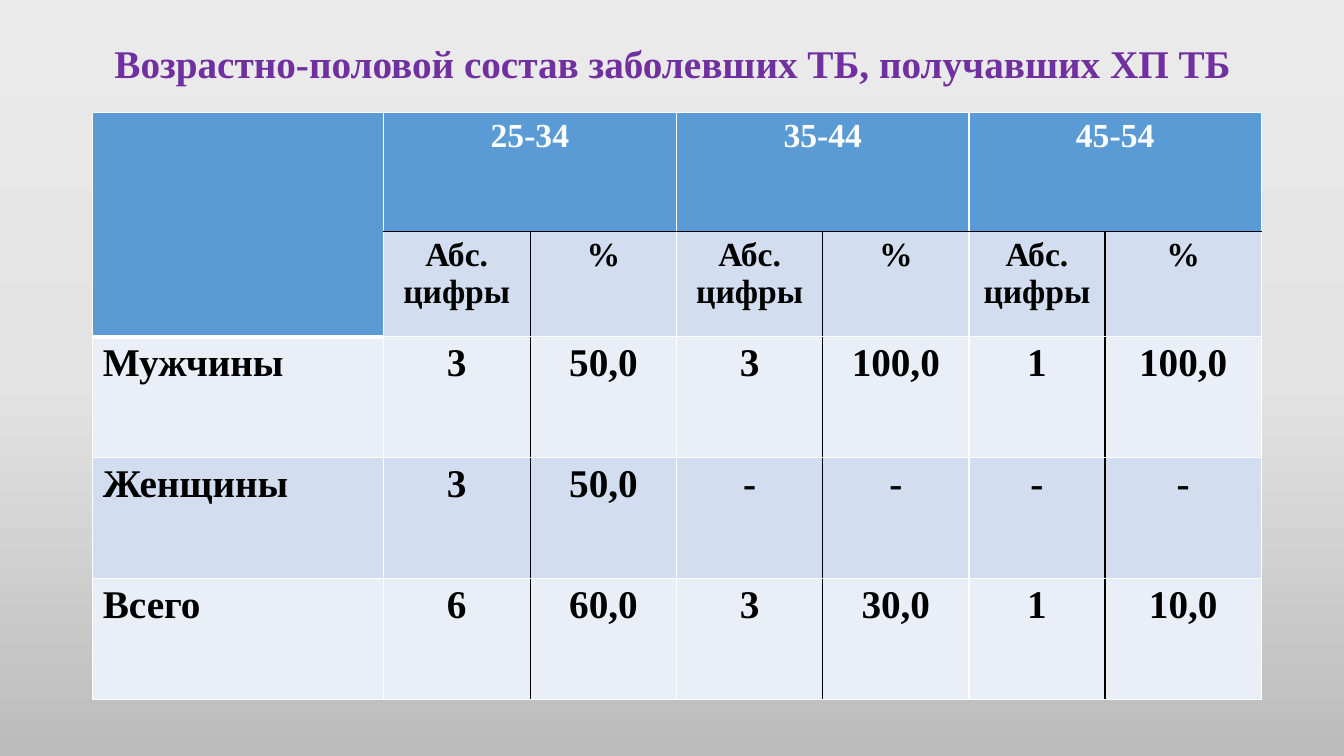
from copy import deepcopy
from lxml import etree
from pptx import Presentation, util as u
from pptx.dml.color import RGBColor
from pptx.enum import text
from pptx.oxml import ns

WHITE = RGBColor(0xFF, 0xFF, 0xFF)
BLACK = RGBColor(0, 0, 0)
BLUE = RGBColor(0x5B, 0x9B, 0xD5)
MID = RGBColor(0xD2, 0xDE, 0xEF)
PALE = RGBColor(0xEA, 0xEF, 0xF7)
PURPLE = RGBColor(0x70, 0x30, 0xA0)
SHADES = [(0, RGBColor(0xEB, 0xEA, 0xEA)), (0.5, RGBColor(0xE4, 0xE3, 0xE3)),
          (1, RGBColor(0xBD, 0xBC, 0xBC))]
FONT = "Times New Roman"
TITLE = "Возрастно-половой состав заболевших ТБ, получавших ХП ТБ"
COLS = [2.88, 1.46, 1.45, 1.45, 1.45, 1.35, 1.55]
ROWS = [1.18, 1.04, 1.2, 1.2, 1.2]
DATA = [
    ["", "25-34", "", "35-44", "", "45-54", ""],
    [""] + ["Абс.\nцифры", "%"] * 3,
    ["Мужчины", "3", "50,0", "3", "100,0", "1", "100,0"],
    ["Женщины", "3", "50,0", "-", "-", "-", "-"],
    ["Всего", "6", "60,0", "3", "30,0", "1", "10,0"],
]


def style(par, size, color, align):
    """Set the bold face, size, colour and alignment of a paragraph."""
    par.alignment = align
    par.font.name, par.font.size, par.font.bold = FONT, u.Pt(size), True
    par.font.color.rgb = color


def shade(slide):
    """Fill the background with a three-stop vertical gradient."""
    fill = slide.background.fill
    fill.gradient()
    fill.gradient_angle = 270
    stops = next(slide.element.iter(ns.qn("a:gsLst")))
    stops.insert(1, deepcopy(stops[0]))
    for stop, (place, color) in zip(fill.gradient_stops, SHADES):
        stop.position = place
        stop.color.rgb = color


def head(slide, box):
    """Place the centred title in its box."""
    frame = slide.shapes.add_textbox(*map(u.Inches, box)).text_frame
    frame.word_wrap = True
    frame.vertical_anchor = text.MSO_ANCHOR.MIDDLE
    par = frame.paragraphs[0]
    par.text = TITLE
    par.line_spacing = 0.9
    style(par, 28, PURPLE, text.PP_ALIGN.CENTER)


def edge(cell, side, color, width):
    """Draw one border of a cell."""
    line = etree.SubElement(cell._tc.get_or_add_tcPr(), ns.qn("a:ln" + side),
                            w=str(u.Pt(width)))
    fill = etree.SubElement(line, ns.qn("a:solidFill"))
    etree.SubElement(fill, ns.qn("a:srgbClr"), val=str(color))


def paint(cell, row, col):
    """Give a cell its borders and fill by its place in the grid."""
    top = row == 0 or (row == 1 and col == 0)
    dark = {"L": row > 0 and col > 0 and col % 2 == 0,
            "R": row > 0 and col % 2 == 1,
            "T": row == 1 and col > 0,
            "B": row == 0 and col > 0}
    for side, black in dark.items():
        thick = top and col == 0 and side == "B"
        edge(cell, side, BLACK if black else WHITE, 3 if thick else 1)
    cell.fill.solid()
    cell.fill.fore_color.rgb = BLUE if top else MID if row % 2 else PALE


def grid(slide, left, top):
    """Place the table of cases by age and sex."""
    table = slide.shapes.add_table(
        len(ROWS), len(COLS), u.Inches(left), u.Inches(top),
        u.Inches(sum(COLS)), u.Inches(sum(ROWS))).table
    for col, width in zip(table.columns, COLS):
        col.width = u.Inches(width)
    for row, height in zip(table.rows, ROWS):
        row.height = u.Inches(height)
    for r, line in enumerate(DATA):
        for c, word in enumerate(line):
            cell = table.cell(r, c)
            paint(cell, r, c)
            cell.text = word
            for par in cell.text_frame.paragraphs:
                style(par, 24 if r < 2 else 28, BLACK if r else WHITE,
                      text.PP_ALIGN.CENTER if c else text.PP_ALIGN.LEFT)
    table.cell(0, 0).merge(table.cell(1, 0))
    for c in range(1, len(COLS), 2):
        table.cell(0, c).merge(table.cell(0, c + 1))


def main():
    """Build the slide and save it."""
    deck = Presentation()
    deck.slide_width, deck.slide_height = u.Inches(13.33), u.Inches(7.5)
    slide = deck.slides.add_slide(deck.slide_layouts[6])
    shade(slide)
    head(slide, (0.92, 0.13, 11.5, 1.05))
    grid(slide, 0.92, 1.12)
    deck.save("out.pptx")


if __name__ == "__main__":
    main()
